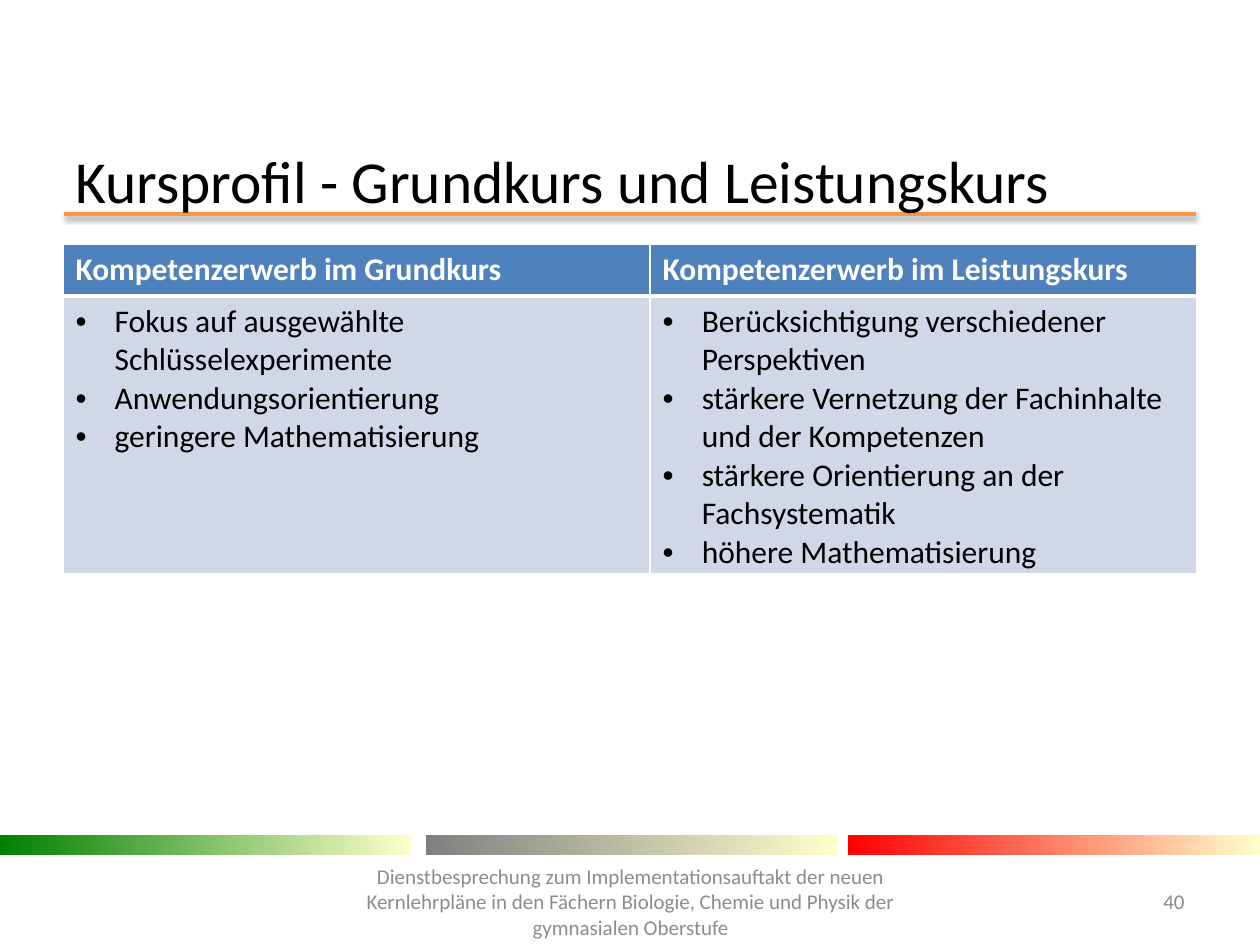
from lxml.etree import SubElement
from pptx import Presentation
from pptx.dml.color import RGBColor
from pptx.enum.shapes import MSO_CONNECTOR, MSO_SHAPE
from pptx.enum.text import MSO_ANCHOR, PP_ALIGN
from pptx.oxml.ns import qn
from pptx.util import Inches, Pt

BLACK = RGBColor(0x00, 0x00, 0x00)
WHITE = RGBColor(0xFF, 0xFF, 0xFF)
GRAY = RGBColor(0x8C, 0x8C, 0x8C)
ORANGE = RGBColor(0xF7, 0x96, 0x46)
HEADER_BLUE = RGBColor(0x4F, 0x81, 0xBD)
BODY_BLUE = RGBColor(0xD0, 0xD8, 0xE8)
CREAM = RGBColor(0xFF, 0xFF, 0xCC)
BAR_GREEN = RGBColor(0x00, 0x80, 0x00)
BAR_GRAY = RGBColor(0x80, 0x80, 0x80)
BAR_RED = RGBColor(0xFF, 0x00, 0x00)

FONT = "Calibri"
BULLET_INDENT = Inches(0.31)

COURSES = [
    ("Kompetenzerwerb im Grundkurs", 4.66, [
        "Fokus auf ausgewählte Schlüsselexperimente",
        "Anwendungsorientierung",
        "geringere Mathematisierung",
    ]),
    ("Kompetenzerwerb im Leistungskurs", 4.34, [
        "Berücksichtigung verschiedener Perspektiven",
        "stärkere Vernetzung der Fachinhalte und der Kompetenzen",
        "stärkere Orientierung an der Fachsystematik",
        "höhere Mathematisierung",
    ]),
]
FOOTER = ("Dienstbesprechung zum Implementationsauftakt der neuen Kernlehrpläne "
          "in den Fächern Biologie, Chemie und Physik der gymnasialen Oberstufe")


def write(frame, lines, size=18, color=BLACK, bold=False,
          align=PP_ALIGN.LEFT, bullets=False):
    """Fill a text frame with one paragraph per line."""
    for index, line in enumerate(lines):
        paragraph = frame.add_paragraph() if index else frame.paragraphs[0]
        paragraph.alignment = align
        if bullets:
            add_bullet(paragraph)
        run = paragraph.add_run()
        run.text = line
        run.font.name = FONT
        run.font.size = Pt(size)
        run.font.bold = bold
        run.font.color.rgb = color


def add_bullet(paragraph):
    properties = paragraph._p.get_or_add_pPr()
    properties.set("marL", str(BULLET_INDENT))
    properties.set("indent", str(-BULLET_INDENT))
    SubElement(properties, qn("a:buFont"), typeface="Arial")
    SubElement(properties, qn("a:buChar"), char="•")


def add_label(slide, text, left, top, width, height, **text_format):
    label = slide.shapes.add_textbox(
        Inches(left), Inches(top), Inches(width), Inches(height))
    label.text_frame.word_wrap = True
    label.text_frame.vertical_anchor = MSO_ANCHOR.MIDDLE
    write(label.text_frame, [text], **text_format)


def add_title_rule(slide):
    rule = slide.shapes.add_connector(
        MSO_CONNECTOR.STRAIGHT,
        Inches(0.51), Inches(1.7), Inches(9.49), Inches(1.7))
    rule.line.color.rgb = ORANGE
    rule.line.width = Pt(2)
    effects = SubElement(rule._element.spPr, qn("a:effectLst"))
    shadow = SubElement(effects, qn("a:outerShdw"), blurRad=str(Pt(3.1)),
                        dist=str(Pt(1.6)), dir="5400000", rotWithShape="0")
    shade = SubElement(shadow, qn("a:srgbClr"), val=str(BLACK))
    SubElement(shade, qn("a:alpha"), val="38000")


def add_fading_bar(slide, left, color):
    bar = slide.shapes.add_shape(
        MSO_SHAPE.RECTANGLE,
        Inches(left), Inches(6.63), Inches(3.27), Inches(0.16))
    bar.shadow.inherit = False
    bar.line.fill.background()
    bar.fill.gradient()
    bar.fill.gradient_angle = 0
    for stop, stop_color, position in zip(
            bar.fill.gradient_stops, (color, CREAM), (0, 1)):
        stop.color.rgb = stop_color
        stop.position = position


def style_cell(cell, fill_color, bottom_width=1):
    """Give a cell white borders and a plain fill."""
    properties = cell._tc.get_or_add_tcPr()
    for side, width in zip("LRTB", (1, 1, 1, bottom_width)):
        border = SubElement(properties, qn(f"a:ln{side}"), w=str(Pt(width)))
        border_fill = SubElement(border, qn("a:solidFill"))
        SubElement(border_fill, qn("a:srgbClr"), val=str(WHITE))
    cell.fill.solid()
    cell.fill.fore_color.rgb = fill_color


def add_course_table(slide):
    table = slide.shapes.add_table(
        2, len(COURSES), Inches(0.5), Inches(1.94), Inches(9), Inches(2.61)).table
    table.rows[0].height = Inches(0.41)
    table.rows[1].height = Inches(2.2)
    for column, (heading, width, goals) in enumerate(COURSES):
        table.columns[column].width = Inches(width)
        header, body = table.cell(0, column), table.cell(1, column)
        style_cell(header, HEADER_BLUE, bottom_width=3)
        write(header.text_frame, [heading], color=WHITE, bold=True)
        style_cell(body, BODY_BLUE)
        write(body.text_frame, goals, bullets=True)


def main():
    presentation = Presentation()
    presentation.slide_width = Inches(10)
    presentation.slide_height = Inches(7.5)
    slide = presentation.slides.add_slide(presentation.slide_layouts[6])

    add_title_rule(slide)
    for left, color in ((0, BAR_GREEN), (3.38, BAR_GRAY), (6.73, BAR_RED)):
        add_fading_bar(slide, left, color)
    add_label(slide, "Kursprofil - Grundkurs und Leistungskurs",
              0.5, 1.23, 9, 0.39, size=34)
    add_course_table(slide)
    add_label(slide, "40", 8.86, 6.95, 0.64, 0.4,
              size=12, color=GRAY, align=PP_ALIGN.RIGHT)
    add_label(slide, FOOTER, 2.68, 6.87, 4.65, 0.57,
              size=12, color=GRAY, align=PP_ALIGN.CENTER)

    presentation.save("out.pptx")


if __name__ == "__main__":
    main()
